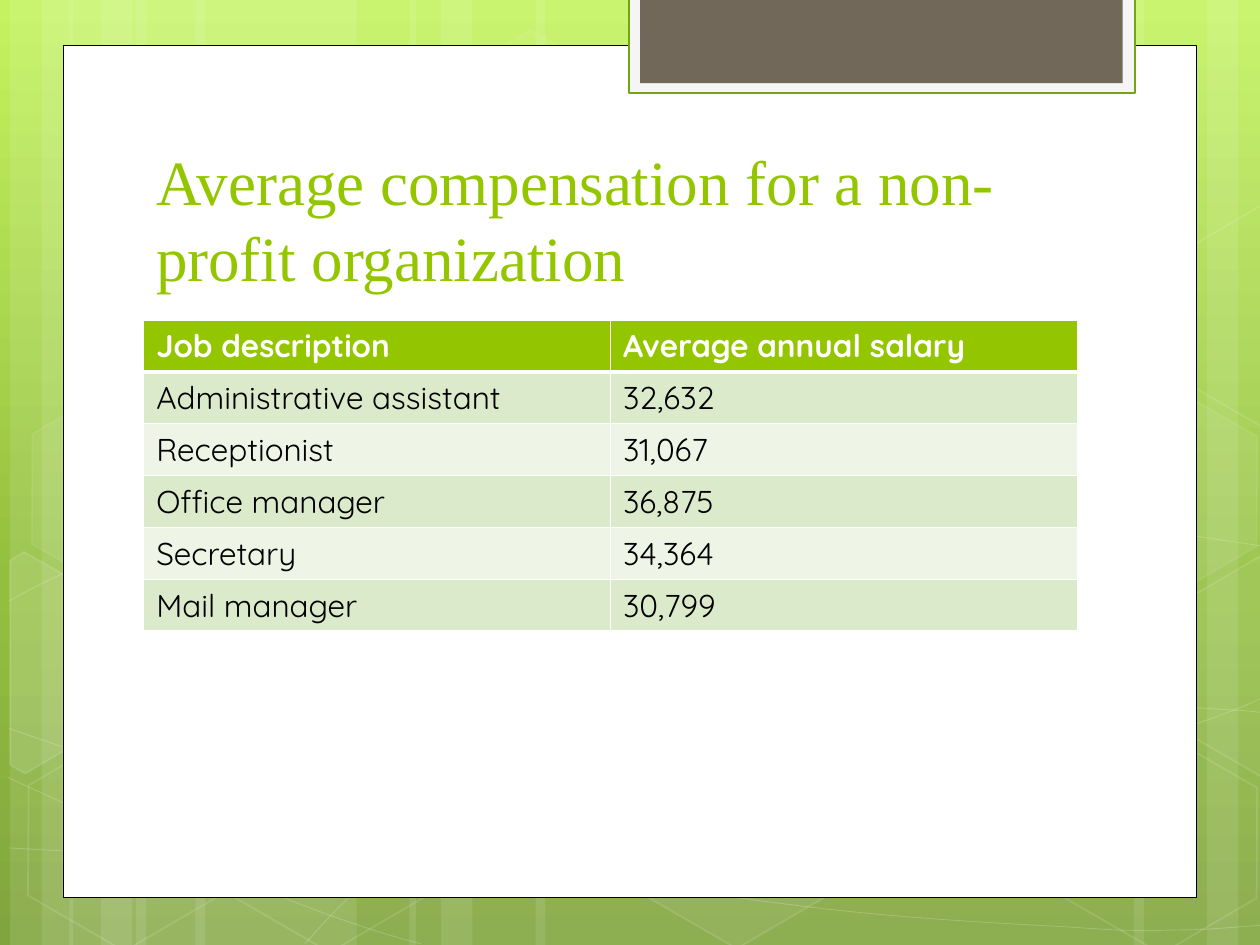
import copy

import lxml.etree
import pptx
import pptx.dml.color
import pptx.enum.shapes
import pptx.enum.text
import pptx.oxml.ns
import pptx.util

WIDTH, HEIGHT = 10, 7.5
COLORS = {
    "white": "FFFFFF", "black": "000000", "green": "94C600",
    "band_dark": "DCEACC", "band_light": "EEF5E7",
    "tab": "F5F5F5", "tab_line": "74A510", "tab_core": "71685A",
    "sky": "C3F35F", "leaf": "93BF3F", "moss": "81A53E",
}
BACKGROUND_STOPS = [(0, "sky"), (0.62, "leaf"), (1, "moss")]

STRIPE_TRIO = [(1.08, 1.75), (0.08, 0.5), (0.33, 0.83)]
STRIPES = (
    STRIPE_TRIO
    + [(left + 0.47, width) for left, width in STRIPE_TRIO]
    + [(7.33, 1.75), (9.58, 0.5), (9, 0.83), (4.25, 3.08), (3.25, 0.5), (3.5, 0.83)]
)
# Each curve is a start point followed by triples of Bezier points.
CURVES = [
    [(0.07, 6.73), (0.61, 6.76), (1.15, 6.79), (1.9, 6.78), (2.65, 6.77), (3.58, 6.75),
     (4.58, 6.65), (5.58, 6.55), (7, 6.36), (7.92, 6.17), (8.83, 5.98), (9.77, 5.68),
     (10.07, 5.51)],
    [(0.07, 4.77), (0.36, 4.61), (0.65, 4.46), (1.21, 4.31), (1.78, 4.16), (2.59, 3.94),
     (3.47, 3.87), (4.36, 3.8), (5.44, 3.79), (6.54, 3.87), (7.64, 3.95), (9.47, 4.26),
     (10.07, 4.34)],
    [(0.06, 6.17), (1.27, 6.72), (2.47, 7.27), (3.34, 7.49)],
    [(0.07, 5.78), (0.38, 5.89), (0.7, 6), (1.28, 6.16), (1.86, 6.31), (2.73, 6.56),
     (3.57, 6.73), (4.4, 6.9), (5.45, 7.08), (6.28, 7.18), (7.11, 7.29), (8, 7.33),
     (8.53, 7.36), (9.05, 7.4), (9.19, 7.38), (9.45, 7.38), (9.71, 7.37), (9.89, 7.35),
     (10.07, 7.34)],
    [(2.42, 7.49), (2.6, 7.29), (2.78, 7.09), (3.02, 6.91), (3.26, 6.73), (3.6, 6.53),
     (3.88, 6.39), (4.16, 6.25), (4.33, 6.19), (4.7, 6.09), (5.06, 5.99), (5.73, 5.85),
     (6.08, 5.78), (6.44, 5.71), (6.49, 5.71), (6.8, 5.69), (7.11, 5.66), (7.6, 5.63),
     (7.94, 5.62), (8.29, 5.61), (8.86, 5.62), (8.86, 5.62), (9.53, 5.62), (9.71, 5.63),
     (9.88, 5.64), (9.97, 5.65), (10.06, 5.66), (10.03, 5.65), (10.06, 5.66)],
]
STRAIGHT_ENDS = {(9.53, 5.62)}  # curve points reached by a straight line
# Left, top, fill opacity and line opacity in percent.
HEXAGONS = [
    (3.34, 0.36, 4, 8), (4.97, 5.89, 6, 12), (0.11, 5.91, 0, 12),
    (0.14, 3.12, 7, 8), (1.74, 5.92, 0, 12), (7.53, 4.53, 10, 12),
    (8.34, 5.93, 0, 12), (8.34, 3.14, 7, 8),
]
RIGHT_CUT = [(9.26, 4.85), (10.01, 4.41), (10.09, 4.46), (10.09, 6.13),
             (10.02, 6.17), (9.26, 5.73)]
# Hexagons cut off by the slide's edge: corners and fill opacity.
CUT_HEXAGONS = [
    ([(0.08, 4.45), (0.19, 4.38), (0.96, 4.82), (0.95, 5.7), (0.2, 6.14), (0.08, 6.07)], 10),
    (RIGHT_CUT, 4),
    ([(x, y - 2.78) for x, y in RIGHT_CUT], 0),
]
SALARIES = [
    ("Job description", "Average annual salary"),
    ("Administrative assistant", "32,632"),
    ("Receptionist", "31,067"),
    ("Office manager", "36,875"),
    ("Secretary", "34,364"),
    ("Mail manager", "30,799"),
]


def rgb(name):
    return pptx.dml.color.RGBColor.from_string(COLORS[name])


def inches(*lengths):
    return [pptx.util.Inches(length) for length in lengths]


def add_element(parent, tag, **attributes):
    return lxml.etree.SubElement(parent, pptx.oxml.ns.qn(tag), **attributes)


def set_opacity(shape, location, percent):
    color = shape.element.spPr.xpath(location)[0]
    add_element(color, "a:alpha", val=str(percent * 1000))


def style(shape, fill=None, opacity=100, line=None, line_width=1, line_opacity=100):
    shape.shadow.inherit = False
    if fill and opacity:
        shape.fill.solid()
        shape.fill.fore_color.rgb = rgb(fill)
        if opacity < 100:
            set_opacity(shape, "a:solidFill/a:srgbClr", opacity)
    else:
        shape.fill.background()
    if line:
        shape.line.color.rgb = rgb(line)
        shape.line.width = pptx.util.Pt(line_width)
        if line_opacity < 100:
            set_opacity(shape, "a:ln/a:solidFill/a:srgbClr", line_opacity)
    else:
        shape.line.fill.background()


def add_box(slide, left, top, width, height, **look):
    shape = slide.shapes.add_shape(
        pptx.enum.shapes.MSO_SHAPE.RECTANGLE, *inches(left, top, width, height))
    style(shape, **look)


def add_hexagon(slide, left, top, opacity, line_opacity):
    shape = slide.shapes.add_shape(
        pptx.enum.shapes.MSO_SHAPE.HEXAGON, *inches(left, top, 1.75, 1.52))
    shape.adjustments[0] = 0.285
    shape.adjustments[1] = 1.155
    shape.rotation = 30
    style(shape, "white", opacity, "white", 1, line_opacity)


def add_outline(slide, points, close, **look):
    """Draw straight lines through points, on a grid of hundredths of an inch."""
    grid = [(round(x * 100), round(y * 100)) for x, y in points]
    builder = slide.shapes.build_freeform(*grid[0], scale=pptx.util.Inches(0.01))
    builder.add_line_segments(grid[1:], close=close)
    shape = builder.convert_to_shape()
    style(shape, **look)
    return shape


def add_curve(slide, points):
    """Draw an outline, then join each triple of its lines into a Bezier curve."""
    shape = add_outline(slide, points, False,
                        line="white", line_width=0.5, line_opacity=20)
    lines = shape.element.spPr.xpath(".//a:lnTo")
    index = 0
    while index < len(lines):
        if points[index + 1] in STRAIGHT_ENDS:
            index += 1
            continue
        triple = lines[index:index + 3]
        outline = triple[0].getparent()
        curve = add_element(outline, "a:cubicBezTo")
        outline.replace(triple[0], curve)
        for line in triple:
            curve.append(line[0])
        for line in triple[1:]:
            outline.remove(line)
        index += 3


def paint_background(slide):
    fill = slide.background.fill
    fill.gradient()
    fill.gradient_angle = 270
    stop_list = slide.element.find(".//" + pptx.oxml.ns.qn("a:gsLst"))
    stop_list.append(copy.deepcopy(stop_list[-1]))
    for stop, (position, color) in zip(fill.gradient_stops, BACKGROUND_STOPS):
        stop.position = position
        stop.color.rgb = rgb(color)


def add_run(paragraph, text, size, font, color, bold=False):
    run = paragraph.add_run()
    run.text = text
    run.font.size = pptx.util.Pt(size)
    run.font.name = font
    run.font.bold = bold
    run.font.color.rgb = rgb(color)


def add_title(slide, text):
    frame = slide.shapes.add_textbox(*inches(1.14, 1.13, 7.68, 1.25)).text_frame
    frame.word_wrap = True
    frame.vertical_anchor = pptx.enum.text.MSO_ANCHOR.BOTTOM
    add_run(frame.paragraphs[0], text, 36, "Times New Roman", "green")


def add_borders(cell, top, bottom):
    properties = cell._tc.get_or_add_tcPr()
    for side, width in (("L", 1), ("R", 1), ("T", top), ("B", bottom)):
        line = add_element(properties, f"a:ln{side}", w=str(pptx.util.Pt(width)))
        fill = add_element(line, "a:solidFill")
        add_element(fill, "a:srgbClr", val=COLORS["white"])


def add_salary_table(slide):
    table = slide.shapes.add_table(
        len(SALARIES), 2, *inches(1.14, 2.54, 7.41, 2.47)).table
    for row, texts in enumerate(SALARIES):
        header = row == 0
        band = "green" if header else ("band_light", "band_dark")[row % 2]
        for column, text in enumerate(texts):
            cell = table.cell(row, column)
            add_borders(cell, 3 if row == 1 else 1, 3 if header else 1)
            cell.fill.solid()
            cell.fill.fore_color.rgb = rgb(band)
            add_run(cell.text_frame.paragraphs[0], text, 18, "Quicksand",
                    "white" if header else "black", header)


def main():
    presentation = pptx.Presentation()
    presentation.slide_width, presentation.slide_height = inches(WIDTH, HEIGHT)
    slide = presentation.slides.add_slide(presentation.slide_layouts[6])
    paint_background(slide)
    for left, width in STRIPES:
        add_box(slide, left, 0, width, HEIGHT, fill="white", opacity=10)
    for curve in CURVES:
        add_curve(slide, curve)
    for hexagon in HEXAGONS:
        add_hexagon(slide, *hexagon)
    for corners, opacity in CUT_HEXAGONS:
        add_outline(slide, corners, True, fill="white", opacity=opacity,
                    line="white", line_opacity=12)
    add_box(slide, 0.5, 0.36, 9, 6.76, fill="white", line="black", line_width=0.5)
    add_box(slide, 4.99, -0.02, 4.02, 0.76, fill="tab", line="tab_line", line_width=1.25)
    add_box(slide, 5.08, -0.02, 3.83, 0.68, fill="tab_core")
    add_title(slide, "Average compensation for a non-profit organization")
    add_salary_table(slide)
    presentation.save("out.pptx")


if __name__ == "__main__":
    main()
